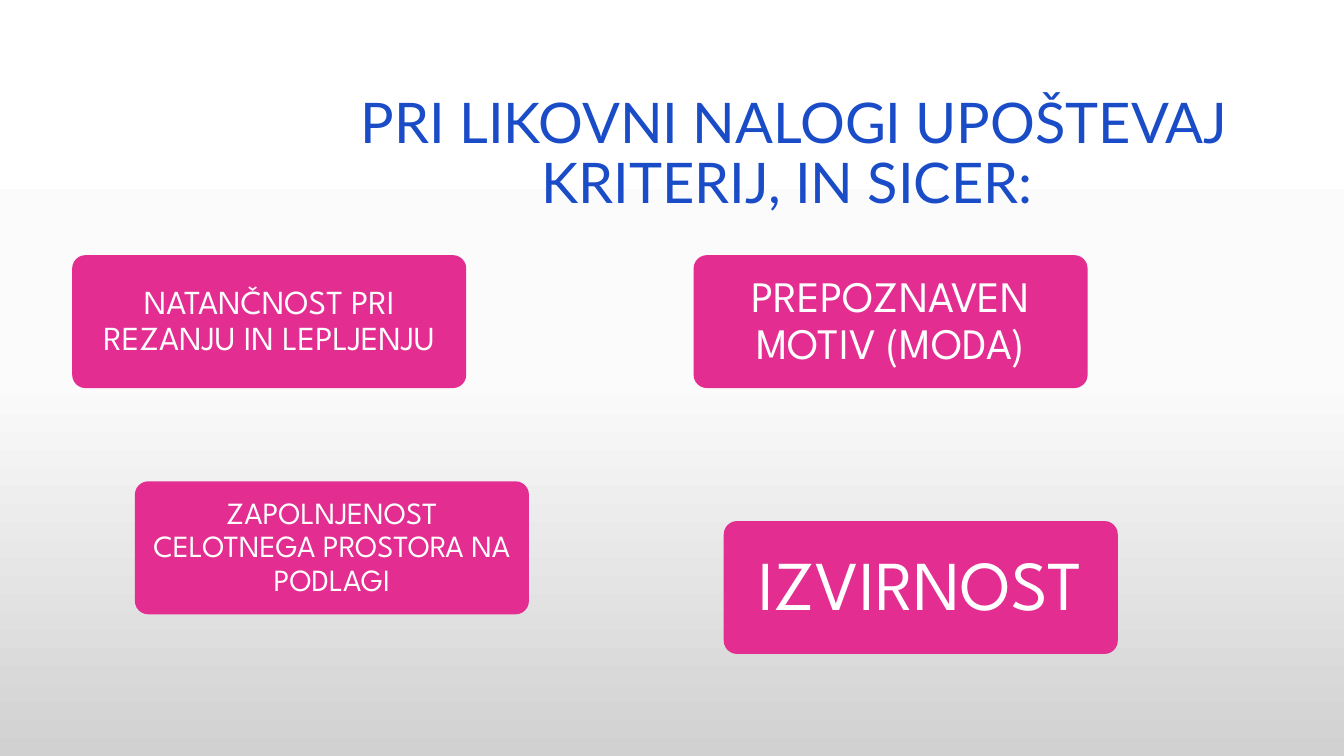
"""Build a slide with a title and four criteria cards."""
from copy import deepcopy

from pptx import Presentation
from pptx.dml.color import RGBColor as Rgb
from pptx.enum.shapes import MSO_SHAPE as Kind
from pptx.enum.text import MSO_ANCHOR as Anchor, MSO_AUTO_SIZE as Auto, PP_ALIGN as Align
from pptx.util import Cm, Pt

TITLE = "PRI LIKOVNI NALOGI UPOŠTEVAJ KRITERIJ, IN SICER: "
CARDS = [
    ("NATANČNOST PRI REZANJU IN LEPLJENJU", 24, 1.82, 6.43),
    ("PREPOZNAVEN MOTIV (MODA)", 31, 17.48, 6.43),
    ("ZAPOLNJENOST CELOTNEGA PROSTORA NA PODLAGI", 22, 3.4, 12.13),
    ("IZVIRNOST", 50, 18.24, 13.13),
]
COLORS = {"title": "1A4CC8", "card": "E32D91", "text": "FFFFFF"}
STOPS = [(0, "FFFFFF"), (0.5, "FBFBFB"), (1, "D1D1D1")]
WIDE, HIGH = 9.93, 3.35


def write(shape, text, size, font, color, inset):
    """Put centred text in a shape."""
    frame = shape.text_frame
    frame.word_wrap = True
    frame.auto_size = Auto.NONE
    frame.vertical_anchor = Anchor.MIDDLE
    frame.margin_left = frame.margin_right = Cm(inset[0])
    frame.margin_top = frame.margin_bottom = Cm(inset[1])
    para = frame.paragraphs[0]
    para.alignment = Align.CENTER
    para.line_spacing = 0.9
    run = para.add_run()
    run.text = text
    run.font.size = Pt(size)
    run.font.name = font
    run.font.color.rgb = Rgb.from_string(COLORS[color])


def shade(slide):
    """Fill the background from top to bottom."""
    fill = slide.background.fill
    fill.gradient()
    fill.gradient_angle = 270
    first = slide.element.xpath(".//p:bg//a:gs")[0]
    first.addnext(deepcopy(first))
    for stop, (place, color) in zip(fill.gradient_stops, STOPS):
        stop.position = place
        stop.color.rgb = Rgb.from_string(color)


def main():
    """Save the slide."""
    prs = Presentation()
    prs.slide_width, prs.slide_height = Cm(33.87), Cm(19.05)
    slide = prs.slides.add_slide(prs.slide_layouts[5])
    shade(slide)

    title = slide.shapes.title
    title.left, title.top = Cm(8.05), Cm(2.13)
    title.width, title.height = Cm(23.93), Cm(3.58)
    write(title, TITLE, size=40, font="Lato", color="title", inset=(0.25, 0.13))

    for text, size, left, top in CARDS:
        card = slide.shapes.add_shape(
            Kind.ROUNDED_RECTANGLE, Cm(left), Cm(top), Cm(WIDE), Cm(HIGH))
        card.adjustments[0] = 0.1
        card.shadow.inherit = False
        card.fill.solid()
        card.fill.fore_color.rgb = Rgb.from_string(COLORS["card"])
        card.line.fill.background()
        pad = size / 94
        write(card, text, size=size, font="League Spartan", color="text", inset=(pad, pad))

    prs.save("out.pptx")


if __name__ == "__main__":
    main()
